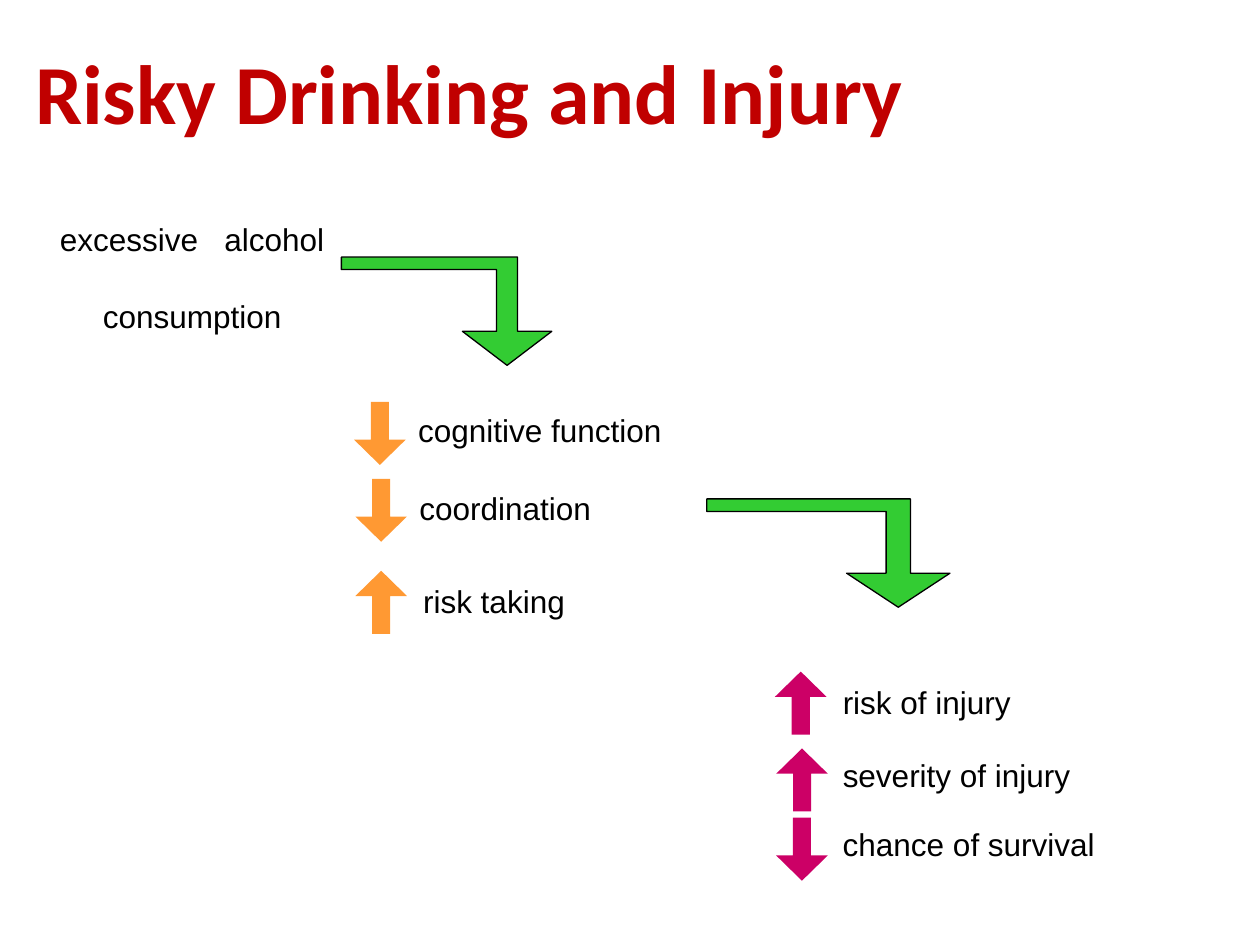
import pptx
import pptx.util
import pptx.dml.color
import pptx.enum.shapes
import pptx.enum.text
from pptx.util import Inches

ALIGN = pptx.enum.text.PP_ALIGN
BODY = {"name": "Arial", "size": pptx.util.Pt(18), "bold": False}
TITLE = {"name": "Calibri", "size": pptx.util.Pt(48), "bold": True}


def color(hex_value):
    return pptx.dml.color.RGBColor.from_string(hex_value)


def paint(shape, fill, line=None):
    shape.shadow.inherit = False
    shape.fill.solid()
    shape.fill.fore_color.rgb = color(fill)
    if line:
        shape.line.color.rgb = color(line)
        shape.line.width = pptx.util.Pt(0.75)
    else:
        shape.line.fill.background()


def add_text(slide, box, lines, font_format, hex_value="000000", paragraph_format=None):
    shape = slide.shapes.add_textbox(*map(Inches, box))
    frame = shape.text_frame
    frame.word_wrap = True
    for index, line in enumerate(lines):
        paragraph = frame.add_paragraph() if index else frame.paragraphs[0]
        run = paragraph.add_run()
        run.text = line
        for name, value in font_format.items():
            setattr(run.font, name, value)
        run.font.color.rgb = color(hex_value)
        for name, value in (paragraph_format or {}).items():
            setattr(paragraph, name, value)
        if index:
            paragraph.space_before = pptx.util.Pt(22)


def add_effect(slide, arrow_at, text_box, label, rises, fill):
    """One effect: a block arrow up or down, with its label."""
    arrow = slide.shapes.add_shape(
        pptx.enum.shapes.MSO_SHAPE.DOWN_ARROW,
        *map(Inches, (*arrow_at, 0.41, 0.5)))
    arrow.adjustments[0] = 0.349
    arrow.adjustments[1] = 0.488
    arrow.rotation = 180 if rises else 0
    paint(arrow, fill)
    add_text(slide, text_box, [label], BODY)


def add_elbow_arrow(slide, left, top, width, height):
    """A bar that runs right, then turns down into an arrowhead."""
    right, bottom = left + width, top + height
    head, shaft, bar, tip = 0.425 * width, 0.1 * width, 0.1, 0.27
    middle = right - head / 2
    inner, outer = middle - shaft / 2, middle + shaft / 2
    points = [
        (middle, bottom), (right - head, bottom - tip), (inner, bottom - tip),
        (inner, top + bar), (left, top + bar), (left, top),
        (outer, top), (outer, bottom - tip), (right, bottom - tip),
    ]
    corners = [(Inches(x), Inches(y)) for x, y in points]
    builder = slide.shapes.build_freeform(*corners[0])
    builder.add_line_segments(corners[1:], close=True)
    paint(builder.convert_to_shape(), "33CC33", "000000")


def main():
    presentation = pptx.Presentation()
    presentation.slide_width, presentation.slide_height = Inches(10), Inches(7.5)
    slide = presentation.slides.add_slide(presentation.slide_layouts[6])

    # Title
    add_text(slide, (0.18, 0.36, 7.48, 0.89), ["Risky Drinking and Injury"],
             TITLE, "C00000", {"line_spacing": 0.9})

    # Cause
    add_text(slide, (0.37, 1.7, 2.31, 0.71), ["excessive   alcohol", "consumption"],
             BODY, paragraph_format={"alignment": ALIGN.CENTER})

    # Effects on the drinker, then on injury
    effects = [
        ((2.81, 3.19), (3.22, 3.21, 2.25, 0.4), "cognitive function", False, "FF9933"),
        ((2.82, 3.8), (3.23, 3.83, 1.62, 0.4), "coordination", False, "FF9933"),
        ((2.82, 4.53), (3.26, 4.57, 2, 0.4), "risk taking", True, "FF9933"),
        ((6.15, 5.33), (6.59, 5.37, 2.15, 0.4), "risk of injury", True, "CC0066"),
        ((6.16, 5.94), (6.59, 5.95, 2.91, 0.4), "severity of injury", True, "CC0066"),
        ((6.16, 6.49), (6.59, 6.5, 3.4, 0.4), "chance of survival", False, "CC0066"),
    ]
    for effect in effects:
        add_effect(slide, *effect)

    # Links between the steps
    add_elbow_arrow(slide, 2.71, 2.04, 1.67, 0.86)
    add_elbow_arrow(slide, 5.61, 3.96, 1.93, 0.86)

    presentation.save("out.pptx")


if __name__ == "__main__":
    main()
